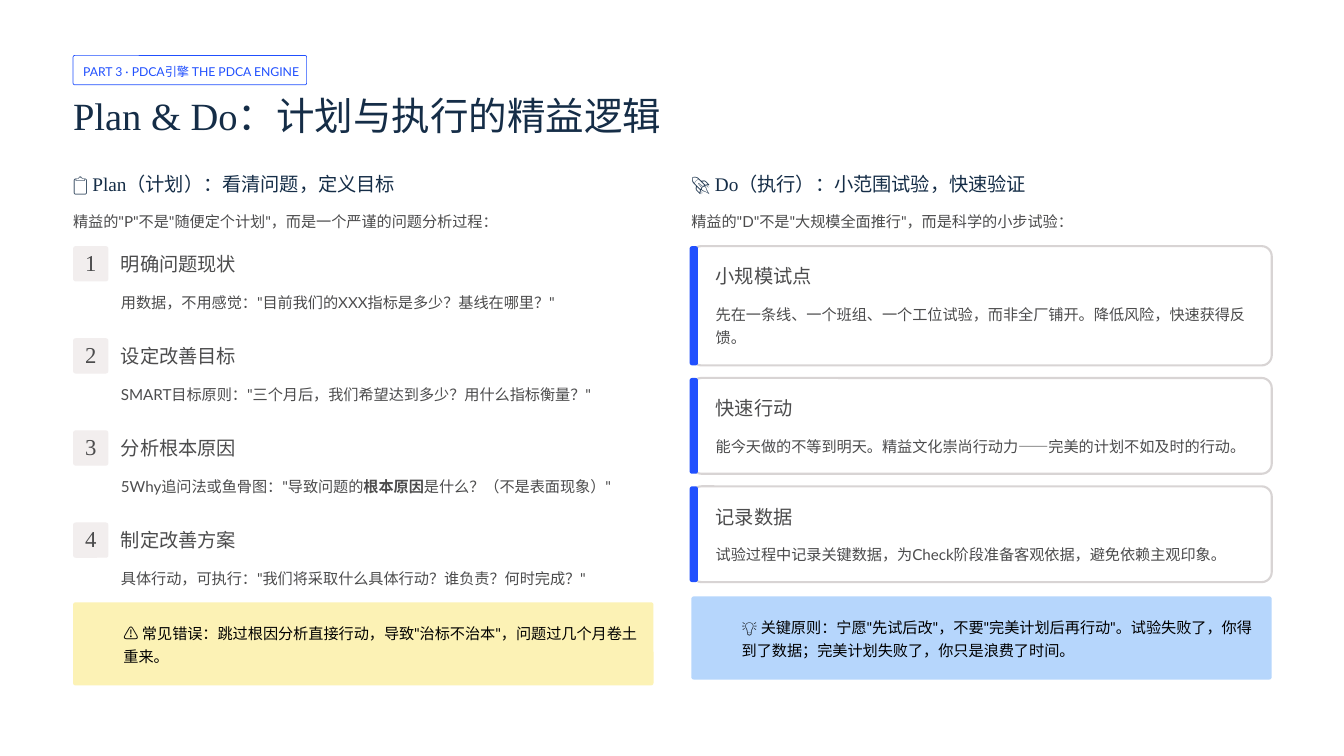
from pptx import Presentation
from pptx.dml.color import RGBColor
from pptx.enum.shapes import MSO_SHAPE
from pptx.enum.text import MSO_ANCHOR, PP_ALIGN
from pptx.util import Inches, Pt

ROUNDED = MSO_SHAPE.ROUNDED_RECTANGLE
TOP, MIDDLE = MSO_ANCHOR.TOP, MSO_ANCHOR.MIDDLE
LEFT, CENTER = PP_ALIGN.LEFT, PP_ALIGN.CENTER

WHITE = RGBColor(0xFF, 0xFF, 0xFF)
BLACK = RGBColor(0x00, 0x00, 0x00)
BLUE = RGBColor(0x21, 0x50, 0xFE)
NAVY = RGBColor(0x15, 0x2D, 0x47)
GREY = RGBColor(0x4C, 0x4C, 0x4D)
BADGE = RGBColor(0xF2, 0xEE, 0xEE)
BORDER = RGBColor(0xD8, 0xD4, 0xD4)
YELLOW = RGBColor(0xFC, 0xF2, 0xB5)
SKY = RGBColor(0xB6, 0xD6, 0xFC)

SERIF, SANS = "Times New Roman", "Lato"

# Text styles: font values, line spacing in points, colour
TAG = ({"name": SANS, "size": Pt(10.5)}, 15.5, BLUE)
TITLE = ({"name": SERIF, "size": Pt(33), "bold": False}, 41.5, NAVY)
HEADING = ({"name": SERIF, "size": Pt(16.5)}, 20.5, NAVY)
SUBHEAD = ({"name": SERIF, "size": Pt(16.5)}, 20.5, GREY)
NUMBER = ({"name": SERIF, "size": Pt(19.5)}, 19.5, GREY)
BODY = ({"name": SANS, "size": Pt(13)}, 19.5, GREY)
NOTE = ({"name": SANS, "size": Pt(13)}, 19.5, BLACK)

COLUMN_WIDTH = 6.91
STEP_PITCH = 3.29 / 3
CARD_GAP = 0.15

PLAN_STEPS = [
    ("明确问题现状", ['用数据，不用感觉："目前我们的XXX指标是多少？基线在哪里？"']),
    ("设定改善目标", ['SMART目标原则："三个月后，我们希望达到多少？用什么指标衡量？"']),
    ("分析根本原因", ['5Why追问法或鱼骨图："导致问题的', ("根本原因", {"bold": True}),
                '是什么？（不是表面现象）"']),
    ("制定改善方案", ['具体行动，可执行："我们将采取什么具体行动？谁负责？何时完成？"']),
]
# Card title, body, card height
DO_CARDS = [
    ("小规模试点", "先在一条线、一个班组、一个工位试验，而非全厂铺开。降低风险，快速获得反馈。", 1.42),
    ("快速行动", "能今天做的不等到明天。精益文化崇尚行动力——完美的计划不如及时的行动。", 1.14),
    ("记录数据", "试验过程中记录关键数据，为Check阶段准备客观依据，避免依赖主观印象。", 1.14),
]


def write(box, spans, style, wrap=False, align=LEFT, anchor=TOP):
    """Fill a text box with one paragraph; a span is text or (text, font values)."""
    values, spacing, color = style
    frame = box.text_frame
    settings = {"margin_left": 0, "margin_top": 0, "margin_right": 0,
                "margin_bottom": 0, "word_wrap": wrap, "vertical_anchor": anchor}
    for key, value in settings.items():
        setattr(frame, key, value)
    para = frame.paragraphs[0]
    para.alignment = align
    para.line_spacing = Pt(spacing)
    for item in spans:
        text, extra = item if isinstance(item, tuple) else (item, {})
        span = para.add_run()
        span.text = text
        span.font.color.rgb = color
        for key, value in {**values, **extra}.items():
            setattr(span.font, key, value)


def add_text(page, left, top, width, height, spans, style, **layout):
    box = page.shapes.add_textbox(Inches(left), Inches(top), Inches(width), Inches(height))
    write(box, spans, style, **layout)


def add_panel(page, left, top, width, height, radius, fill=None, line=None, weight=1):
    panel = page.shapes.add_shape(ROUNDED, Inches(left), Inches(top),
                                  Inches(width), Inches(height))
    panel.shadow.inherit = False
    panel.adjustments[0] = radius / min(width, height)
    if fill is None:
        panel.fill.background()
    else:
        panel.fill.solid()
        panel.fill.fore_color.rgb = fill
    if line is None:
        panel.line.fill.background()
    else:
        panel.line.color.rgb = line
        panel.line.width = Pt(weight)


def add_header(page, left, top):
    # Section tag
    add_panel(page, left, top, 2.78, 0.35, 0.02, line=BLUE, weight=0.6)
    add_text(page, left + 0.12, top + 0.06, 2.8, 0.22,
             ["PART 3 · PDCA引擎 THE PDCA ENGINE"], TAG)
    # Slide title
    title = page.shapes.title
    title.left, title.top = Inches(left), Inches(top + 0.41)
    title.width, title.height = Inches(8), Inches(0.58)
    write(title, ["Plan & Do：计划与执行的精益逻辑"], TITLE)


def add_intro(page, left, top, icon, heading, lead):
    add_text(page, left, top, COLUMN_WIDTH, 0.29, [icon, " " + heading], HEADING)
    add_text(page, left, top + 0.44, COLUMN_WIDTH, 0.27, [lead], BODY)


def add_step(page, left, top, number, name, spans):
    add_panel(page, left, top, 0.42, 0.42, 0.03, fill=BADGE)
    add_text(page, left + 0.07, top + 0.04, 0.28, 0.35, [str(number)], NUMBER,
             align=CENTER, anchor=MIDDLE)
    add_text(page, left + 0.57, top + 0.06, 2.31, 0.29, [name], SUBHEAD)
    add_text(page, left + 0.57, top + 0.51, 6.34, 0.27, spans, BODY)


def add_card(page, left, top, height, name, body):
    add_panel(page, left, top, COLUMN_WIDTH, height, 0.12,
              fill=WHITE, line=BORDER, weight=1.8)
    add_panel(page, left - 0.02, top, 0.1, height, 0.03, fill=BLUE)
    add_text(page, left + 0.29, top + 0.21, 2.31, 0.29, [name], SUBHEAD)
    add_text(page, left + 0.29, top + 0.65, 6.41, height - 0.87, [body], BODY, wrap=True)


def add_callout(page, left, top, fill, note):
    add_panel(page, left, top, COLUMN_WIDTH, 0.99, 0.03, fill=fill)
    add_text(page, left + 0.6, top + 0.21, 6.12, 0.55, [note], NOTE, wrap=True)


def add_plan_column(page, left, top):
    add_intro(page, left, top, "📋", "Plan（计划）：看清问题，定义目标",
              '精益的"P"不是"随便定个计划"，而是一个严谨的问题分析过程：')
    for index, (name, spans) in enumerate(PLAN_STEPS):
        add_step(page, left, top + 0.89 + index * STEP_PITCH, index + 1, name, spans)
    add_callout(page, left, top + 5.13, YELLOW,
                '⚠️ 常见错误：跳过根因分析直接行动，导致"治标不治本"，问题过几个月卷土重来。')


def add_do_column(page, left, top):
    add_intro(page, left, top, "🚀", "Do（执行）：小范围试验，快速验证",
              '精益的"D"不是"大规模全面推行"，而是科学的小步试验：')
    card_top = top + 0.89
    for name, body, height in DO_CARDS:
        add_card(page, left, card_top, height, name, body)
        card_top += height + CARD_GAP
    add_callout(page, left, top + 5.06, SKY,
                '💡 关键原则：宁愿"先试后改"，不要"完美计划后再行动"。'
                '试验失败了，你得到了数据；完美计划失败了，你只是浪费了时间。')


def main():
    deck = Presentation()
    deck.slide_width, deck.slide_height = Inches(16), Inches(9)
    page = deck.slides.add_slide(deck.slide_layouts[5])
    page.background.fill.solid()
    page.background.fill.fore_color.rgb = WHITE
    add_header(page, 0.87, 0.66)
    add_plan_column(page, 0.87, 2.04)
    add_do_column(page, 8.23, 2.04)
    deck.save("out.pptx")


if __name__ == "__main__":
    main()
